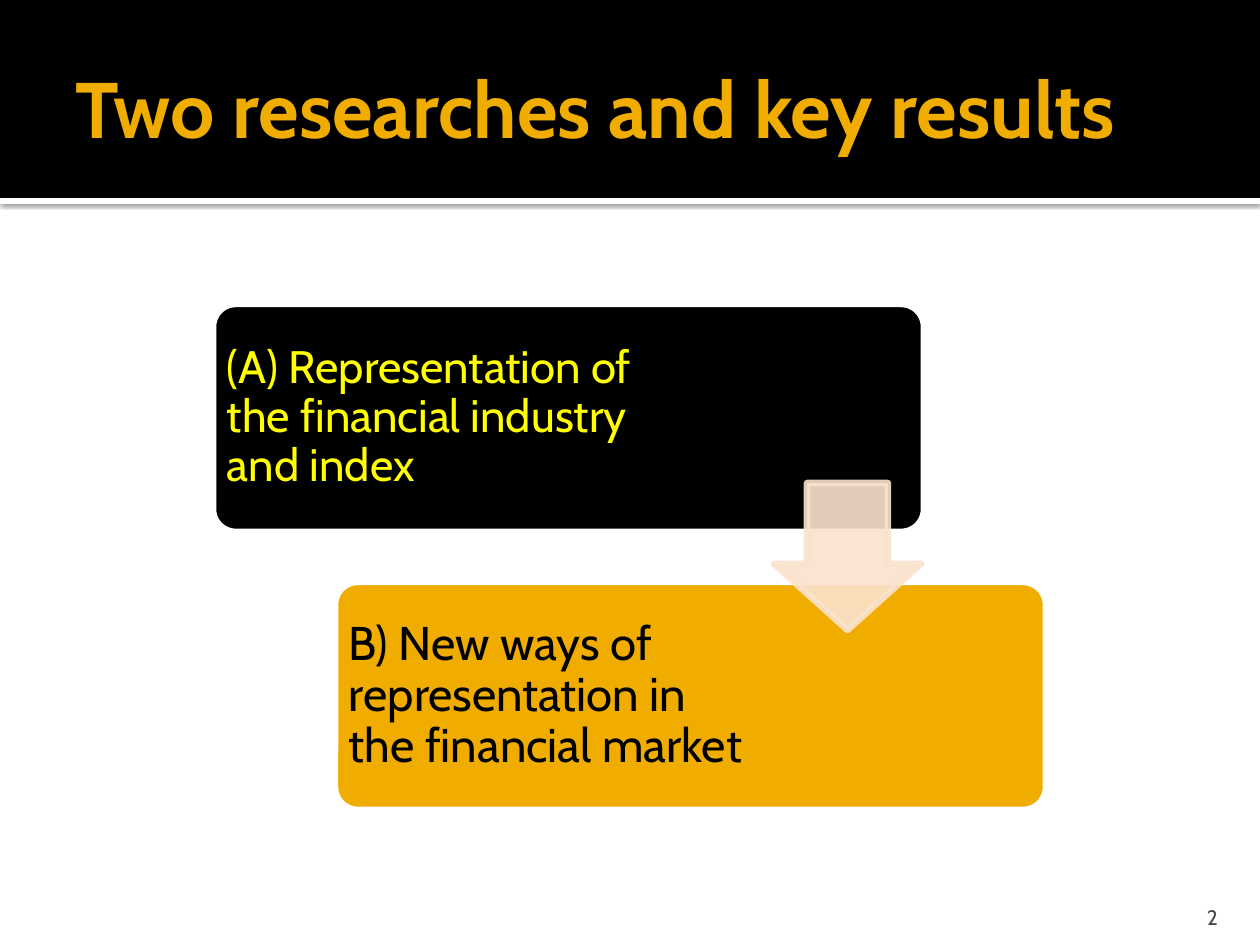
from dataclasses import dataclass

from lxml.etree import SubElement
from pptx import Presentation
from pptx.dml.color import RGBColor
from pptx.enum.shapes import MSO_SHAPE
from pptx.enum.text import MSO_ANCHOR, MSO_AUTO_SIZE, PP_ALIGN
from pptx.oxml.ns import qn
from pptx.util import Emu, Pt

PX_PER_INCH = 126


def px(length):
    return Emu(round(length * 914400 / PX_PER_INCH))


@dataclass(frozen=True)
class Theme:
    font: str = "Cabin"
    black: str = "000000"
    white: str = "FFFFFF"
    amber: str = "F0AD00"
    yellow: str = "FFFF00"
    peach: str = "F9E3CC"
    grey: str = "454545"
    title_size: int = 45
    first_size: int = 26
    second_size: int = 27
    number_size: int = 12
    outline: float = 3.78
    arrow_opacity: int = 90


class SlideBuilder:
    def __init__(self, slide, theme):
        self.slide = slide
        self.theme = theme

    def shape(self, preset, box, fill, line=None, adjustments=()):
        shape = self.slide.shapes.add_shape(preset, *map(px, box))
        shape.shadow.inherit = False
        shape.fill.solid()
        shape.fill.fore_color.rgb = RGBColor.from_string(fill)
        if line:
            shape.line.color.rgb = RGBColor.from_string(line)
            shape.line.width = Pt(self.theme.outline)
        else:
            shape.line.fill.background()
        for index, value in enumerate(adjustments):
            shape.adjustments[index] = value
        return shape

    def header(self, height, rule_height):
        """Dark title band above a white rule that casts a soft shadow."""
        width = 10 * PX_PER_INCH
        rule = self.shape(MSO_SHAPE.RECTANGLE, (0, height, width, rule_height),
                          self.theme.white)
        effects = rule.element.spPr.find(qn("a:effectLst"))
        shadow = SubElement(effects, qn("a:outerShdw"), blurRad=str(Pt(2.5)),
                            dist=str(Pt(0.8)), dir="5400000", rotWithShape="0")
        color = SubElement(shadow, qn("a:srgbClr"), val=self.theme.black)
        SubElement(color, qn("a:alpha"), val="60000")
        self.shape(MSO_SHAPE.RECTANGLE, (0, 0, width, height), self.theme.black)

    def set_text(self, holder, text, size, color, insets, anchor=MSO_ANCHOR.MIDDLE,
                 align=PP_ALIGN.LEFT, spacing=1.0, bold=False):
        frame = holder.text_frame
        frame.text = text
        frame.word_wrap = True
        frame.auto_size = MSO_AUTO_SIZE.NONE
        frame.vertical_anchor = anchor
        (frame.margin_left, frame.margin_top,
         frame.margin_right, frame.margin_bottom) = map(px, insets)
        paragraph = frame.paragraphs[0]
        paragraph.alignment = align
        paragraph.line_spacing = spacing
        font = paragraph.runs[0].font
        font.name = self.theme.font
        font.size = Pt(size)
        font.bold = bold
        font.color.rgb = RGBColor.from_string(color)

    def title(self, text, box):
        title = self.slide.shapes.title
        title.left, title.top, title.width, title.height = map(px, box)
        self.set_text(title, text, self.theme.title_size, self.theme.amber,
                      (13, 6, 6, 6), bold=True)
        # The placeholder exists first, so lift it above the header band.
        title.element.getparent().append(title.element)

    def text(self, text, box, size, color, insets, **layout):
        holder = self.slide.shapes.add_textbox(*map(px, box))
        self.set_text(holder, text, size, color, insets, **layout)

    def card(self, text, box, text_width, fill, size, color):
        left, top, _, height = box
        self.shape(MSO_SHAPE.ROUNDED_RECTANGLE, box, fill, self.theme.white, [0.1])
        self.text(text, (left, top, text_width, height), size, color,
                  (14, 14, 14, 14), spacing=0.9)

    def arrow(self, box):
        arrow = self.shape(MSO_SHAPE.DOWN_ARROW, box, self.theme.peach,
                           self.theme.peach, [0.55, 0.45])
        for color in arrow.element.spPr.iter(qn("a:srgbClr")):
            SubElement(color, qn("a:alpha"),
                       val=str(self.theme.arrow_opacity * 1000))


def main():
    deck = Presentation()
    deck.slide_width, deck.slide_height = px(1260), px(945)
    theme = Theme()
    page = SlideBuilder(deck.slides.add_slide(deck.slide_layouts[5]), theme)

    page.header(198, 6)
    page.title("Two researches and key results", (63, 21, 1134, 173))
    page.text("2", (1130, 892, 101, 38), theme.number_size, theme.grey,
              (13, 6, 13, 0), anchor=MSO_ANCHOR.BOTTOM, align=PP_ALIGN.RIGHT)

    findings = [
        ("(A) Representation of the financial industry and index",
         489, theme.black, theme.first_size, theme.yellow),
        ("B) New ways of representation in the financial market",
         437, theme.amber, theme.second_size, theme.black),
    ]
    left, top, width, height = 213, 304, 711, 228
    step_x, step_y = 122, 278
    for step, (text, text_width, fill, size, color) in enumerate(findings):
        box = (left + step * step_x, top + step * step_y, width, height)
        page.card(text, box, text_width, fill, size, color)
    page.arrow((774, 483, 147, 147))

    deck.save("out.pptx")


if __name__ == "__main__":
    main()
